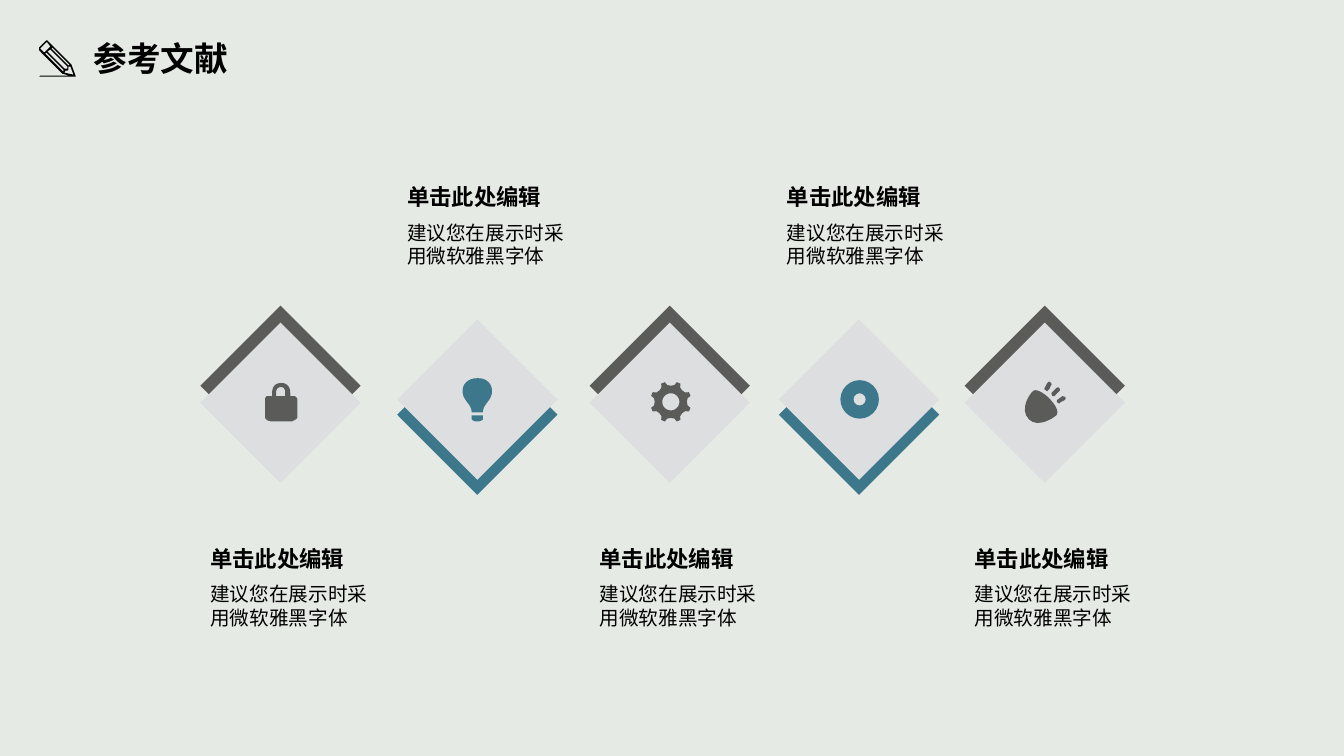
from dataclasses import dataclass
from math import cos, radians, sin

from pptx import Presentation
from pptx.dml.color import RGBColor
from pptx.enum.shapes import MSO_SHAPE as Preset
from pptx.util import Cm, Pt

BACKDROP = RGBColor(0xE5, 0xEA, 0xE4)
FACE = RGBColor(0xDC, 0xDE, 0xE0)
GRAY = RGBColor(0x5B, 0x5B, 0x59)
TEAL = RGBColor(0x3C, 0x77, 0x8C)
BLACK = RGBColor(0, 0, 0)
FONT = "Noto Sans CJK SC"
DIAMOND_SIZE = 4.04
ICON_UNIT = Cm(0.0254)
CURVE_STEPS = 8

# An outline starts at a point; pairs are lines, sextuples are cubic curves.
Outline = list[tuple[float, ...]]


@dataclass
class Level:
    color: RGBColor
    band_top: float
    face_top: float
    heading_top: float
    body_top: float


@dataclass
class Step:
    left: float
    text_left: float
    body_width: float
    level: Level


@dataclass
class Icon:
    left: float
    top: float
    color: RGBColor
    outlines: list[Outline]


def ring(center: float, radii: dict[float, float], count: int) -> Outline:
    """Repeat the angle-to-radius profile evenly around a centre."""
    turn = 360 / count
    return [(center + radius * cos(radians(angle + turn * index)),
             center + radius * sin(radians(angle + turn * index)))
            for index in range(count) for angle, radius in radii.items()]


LOCK = [
    [(29, 13), (25, 13), (25, 10), (25, 4, 22, 0, 16, 0), (10, 0, 7, 4, 7, 10),
     (7, 13), (2, 13), (1, 13, 0, 15, 0, 16), (0, 34), (0, 35, 1, 36, 2, 37),
     (5, 38), (27, 38), (29, 37), (31, 36, 32, 35, 32, 34), (32, 16),
     (32, 15, 30, 13, 29, 13)],
    [(11, 13), (11, 9), (11, 6, 13, 4, 16, 4), (18, 4, 20, 6, 20, 9), (20, 13)],
]
BULB = [
    [(20, 34), (20, 25, 30, 22, 29, 12), (29, 7, 25, 0, 15, 0),
     (4, 0, 0, 7, 0, 12), (-1, 22, 9, 25, 9, 34)],
    [(9, 37), (9, 41), (10, 42, 12, 43, 14, 43), (17, 43, 19, 42, 20, 41), (20, 37)],
]
GEAR = [
    ring(19.5, {-17: 20.4, -12: 17, 0: 16, 12: 17, 17: 20.4}, 8),
    ring(19.5, {0: 8.5}, 36),
]
SPOTLIGHT = [
    [(8, 9), (5, 11, -6, 27, 4, 37), (13, 46, 29, 35, 31, 33),
     (34, 30, 31, 23, 24, 16), (18, 10, 10, 6, 8, 9)],
    [(40, 15), (39, 14, 38, 14, 37, 14), (33, 17), (32, 17, 31, 19, 32, 20),
     (32, 20, 33, 21, 34, 21), (34, 21, 35, 21, 35, 20), (39, 18),
     (40, 17, 41, 16, 40, 15)],
    [(21, 8), (21, 8, 21, 9, 22, 9), (22, 9, 23, 8, 24, 7), (26, 3),
     (27, 2, 26, 1, 25, 0), (24, -1, 23, 0, 22, 1), (20, 5), (19, 6, 19, 8, 21, 8)],
    [(29, 14), (29, 14, 30, 14, 30, 13), (34, 9), (35, 8, 35, 7, 34, 6),
     (34, 5, 32, 5, 31, 6), (27, 10), (26, 11, 26, 12, 27, 13),
     (27, 14, 28, 14, 29, 14)],
]
PENCIL = [
    [(36, 35), (32, 24), (9, 1), (8, 0), (7, 0), (6, 1), (0, 7), (0, 10), (4, 14),
     (23, 33), (30, 35), (1, 35), (0, 35.5), (1, 36), (36, 36)],
    [(34, 34), (25, 32), (26, 30), (28, 30), (29, 29), (29, 26), (31, 26)],
    [(13, 7), (30, 24), (29, 25), (12, 8)],
    [(11, 9), (28, 26), (28, 28), (25, 28), (8, 11)],
    [(1, 8), (7, 2), (8, 2), (11, 6), (5, 12)],
    [(7, 12), (24, 29), (24, 31), (6, 13)],
]

TEXT_BELOW = Level(GRAY, 7.7, 8.13, 13.69, 14.55)
TEXT_ABOVE = Level(TEAL, 8.43, 8.05, 4.57, 5.44)
STEPS = [
    Step(5.05, 5.05, 4.47, TEXT_BELOW),
    Step(10.01, 10.01, 4.88, TEXT_ABOVE),
    Step(14.86, 14.86, 4.7, TEXT_BELOW),
    Step(19.63, 19.58, 4.75, TEXT_ABOVE),
    Step(24.31, 24.31, 4.6, TEXT_BELOW),
]
ICONS = [
    Icon(6.68, 9.65, GRAY, LOCK),
    Icon(11.66, 9.53, TEAL, BULB),
    Icon(16.41, 9.63, GRAY, GEAR),
    Icon(25.83, 9.63, GRAY, SPOTLIGHT),
    Icon(0.99, 1.02, BLACK, PENCIL),
]


def paint(shape, color: RGBColor) -> None:
    shape.shadow.inherit = False
    shape.fill.solid()
    shape.fill.fore_color.rgb = color
    shape.line.fill.background()


def add_preset(page, kind: Preset, left: float, top: float,
               width: float, height: float, color: RGBColor):
    shape = page.shapes.add_shape(kind, Cm(left), Cm(top), Cm(width), Cm(height))
    paint(shape, color)
    return shape


def flatten(outline: Outline) -> list[tuple[float, float]]:
    """Turn lines and curves into points in slide units."""
    points = [outline[0]]
    for segment in outline[1:]:
        if len(segment) == 2:
            points.append(segment)
            continue
        corners = [points[-1], segment[:2], segment[2:4], segment[4:]]
        for step in range(1, CURVE_STEPS + 1):
            t = step / CURVE_STEPS
            weights = ((1 - t) ** 3, 3 * t * (1 - t) ** 2, 3 * t * t * (1 - t), t ** 3)
            points.append(tuple(sum(weight * corner[axis] for weight, corner
                                    in zip(weights, corners)) for axis in (0, 1)))
    return [(x * ICON_UNIT, y * ICON_UNIT) for x, y in points]


def add_icon(page, icon: Icon) -> None:
    first, *others = [flatten(outline) for outline in icon.outlines]
    builder = page.shapes.build_freeform(*first[0])
    builder.add_line_segments(first[1:], close=True)
    for points in others:
        builder.move_to(*points[0])
        builder.add_line_segments(points[1:], close=True)
    paint(builder.convert_to_shape(Cm(icon.left), Cm(icon.top)), icon.color)


def add_text(page, text: str, left: float, top: float, width: float,
             height: float, size: int, bold: bool = False):
    box = page.shapes.add_textbox(Cm(left), Cm(top), Cm(width), Cm(height))
    box.text_frame.word_wrap = True
    para = box.text_frame.paragraphs[0]
    para.text = text
    para.font.name = FONT
    para.font.size = Pt(size)
    para.font.bold = bold
    para.font.color.rgb = BLACK
    return para


def add_step(page, step: Step) -> None:
    level = step.level
    for top, color in ((level.band_top, level.color), (level.face_top, FACE)):
        add_preset(page, Preset.FLOWCHART_DECISION, step.left, top,
                   DIAMOND_SIZE, DIAMOND_SIZE, color)
    add_text(page, "建议您在展示时采用微软雅黑字体", step.text_left,
             level.body_top, step.body_width, 1.45, 14)
    heading = add_text(page, "单击此处编辑", step.text_left,
                       level.heading_top, 4.11, 0.86, 16, bold=True)
    heading.line_spacing = 0.9
    heading.space_before = Pt(10)


def main() -> None:
    deck = Presentation()
    deck.slide_width, deck.slide_height = Cm(33.87), Cm(19.05)
    page = deck.slides.add_slide(deck.slide_layouts[6])

    # Backdrop and title
    add_preset(page, Preset.RECTANGLE, 0, 0, 33.87, 19.05, BACKDROP)
    add_text(page, "参考文献", 2.11, 0.84, 4.29, 1.27, 24, bold=True)

    # Diamonds with their captions
    for step in STEPS:
        add_step(page, step)

    # Icons
    for icon in ICONS:
        add_icon(page, icon)
    disc = add_preset(page, Preset.DONUT, 21.18, 9.58, 0.97, 0.97, TEAL)
    disc.adjustments[0] = 0.34

    deck.save("out.pptx")


if __name__ == "__main__":
    main()
